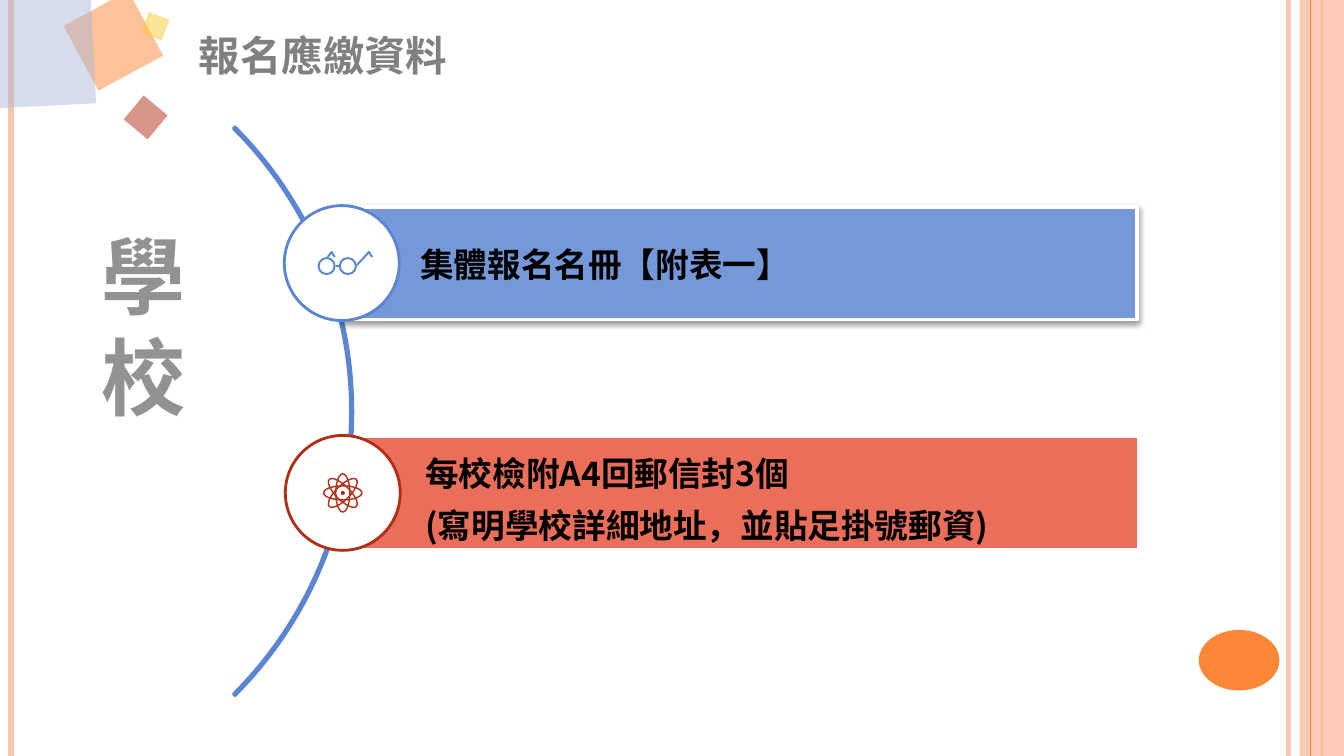
from lxml import etree
from pptx import Presentation
from pptx.dml.color import RGBColor
from pptx.enum import shapes, text
from pptx.oxml import ns
from pptx.util import Inches, Pt

FONT = "Noto Sans CJK SC"
BLUE, RED, ORANGE, PEACH = "5B84D2", "B32C16", "FE8637", "FEC3AE"
RECT, OVAL = shapes.MSO_SHAPE.RECTANGLE, shapes.MSO_SHAPE.OVAL


def rgb(value):
    return RGBColor.from_string(value)


def sub(parent, tag, **attrs):
    return etree.SubElement(parent, ns.qn(tag), attrs)


def style(sp, fill=None, line=None, width=1, alpha=None):
    """Set fill, outline and fill opacity (percent), without a shadow."""
    sp.shadow.inherit = False
    if fill:
        sp.fill.solid()
        sp.fill.fore_color.rgb = rgb(fill)
    else:
        sp.fill.background()
    if alpha:
        color = next(sp.element.spPr.iter(ns.qn("a:srgbClr")))
        sub(color, "a:alpha", val=str(alpha * 1000))
    if line:
        sp.line.color.rgb = rgb(line)
        sp.line.width = Pt(width)
    else:
        sp.line.fill.background()


def add_shape(slide, kind, x, y, w, h, rotation=0, **look):
    sp = slide.shapes.add_shape(kind, Inches(x), Inches(y), Inches(w), Inches(h))
    sp.rotation = rotation
    style(sp, **look)
    return sp


def add_line(slide, x1, y1, x2, y2, color, width):
    line = slide.shapes.add_connector(
        shapes.MSO_CONNECTOR.STRAIGHT, Inches(x1), Inches(y1), Inches(x2), Inches(y2))
    line.line.color.rgb = rgb(color)
    line.line.width = Pt(width)
    sub(line.element.spPr, "a:effectLst")


def add_polyline(slide, points, color, width):
    start, *rest = [(Inches(x), Inches(y)) for x, y in points]
    builder = slide.shapes.build_freeform(*start)
    builder.add_line_segments(rest, close=False)
    style(builder.convert_to_shape(), line=color, width=width)


def write(sp, wording, size, color, align=text.PP_ALIGN.LEFT, spacing=None):
    tf = sp.text_frame
    tf.word_wrap = True
    p = tf.paragraphs[0]
    p.text = wording
    p.alignment = align
    p.line_spacing = spacing
    p.font.name = FONT
    p.font.size = Pt(size)
    p.font.bold = True
    p.font.color.rgb = rgb(color)
    for latin in list(sp.element.iter(ns.qn("a:latin"))):
        latin.addnext(latin.makeelement(ns.qn("a:ea"), {"typeface": FONT}))


def add_text(slide, x, y, w, h, *wording, **look):
    sp = slide.shapes.add_textbox(Inches(x), Inches(y), Inches(w), Inches(h))
    write(sp, *wording, **look)


def add_drop_shadow(sp):
    effects = sp.element.spPr.find(ns.qn("a:effectLst"))
    shadow = sub(effects, "a:outerShdw", blurRad=str(Pt(4)), dist=str(Pt(2)),
                 dir="5400000", rotWithShape="0")
    sub(sub(shadow, "a:srgbClr", val="000000"), "a:alpha", val="40000")


def add_backdrop(slide):
    for x, color, width in ((12.78, "FEC7B4", 3), (0.11, PEACH, 4.5), (13.11, ORANGE, 1.5)):
        add_line(slide, x, 0, x, 7.5, color, width)
    add_shape(slide, RECT, 12.89, 0, 0.44, 7.5, fill=PEACH, alpha=87)
    add_line(slide, 13, 0, 13, 7.5, ORANGE, 0.75)
    add_shape(slide, OVAL, 11.89, 6.25, 0.8, 0.6, fill=ORANGE)
    for x, y, size, rotation, color in (
            (0.76, 0.04, 0.73, 331.6, ORANGE),
            (-0.46, -0.32, 1.38, 357.2, "AEBAD5"),
            (1.29, 1.01, 0.31, 309.8, RED),
            (1.43, 0.15, 0.22, 290.5, "F5CD2D")):
        add_shape(slide, RECT, x, y, size, size, rotation, fill=color, alpha=50)


def add_arc(slide):
    arc = add_shape(slide, shapes.MSO_SHAPE.BLOCK_ARC, -4.48, 0.09, 7.98, 7.98,
                    line=BLUE, width=2)
    for i, value in enumerate((189, 27, 0.003)):
        arc.adjustments[i] = value


def add_banner(slide, x, y, fill, color, edge):
    """Add a bar with a round badge over its left end."""
    bar = add_shape(slide, RECT, x, y, 7.89, 1.12, fill=fill, line="FFFFFF", width=edge)
    add_shape(slide, OVAL, x - 0.57, y - 0.01, 1.14, 1.14, fill="FFFFFF", line=color, width=2)
    return bar


def add_atom(slide, cx, cy):
    for rotation in range(0, 180, 45):
        add_shape(slide, OVAL, cx - 0.19, cy - 0.07, 0.38, 0.14, rotation, line=RED, width=1)
    add_shape(slide, OVAL, cx - 0.02, cy - 0.02, 0.04, 0.04, fill=RED)


def add_glasses(slide):
    for cx in (3.24, 3.45):
        add_shape(slide, OVAL, cx - 0.08, 2.56, 0.16, 0.16, line=BLUE, width=1.4)
    add_line(slide, 3.33, 2.64, 3.37, 2.64, BLUE, 1.4)
    add_polyline(slide, ((3.25, 2.55), (3.29, 2.5), (3.32, 2.55)), BLUE, 1.4)
    add_polyline(slide, ((3.54, 2.63), (3.66, 2.5), (3.69, 2.55)), BLUE, 1.4)


def add_title(slide, wording):
    title = slide.shapes.title
    title.left, title.top = Inches(1.87), Inches(0.26)
    title.width, title.height = Inches(8.13), Inches(0.58)
    title.text_frame.vertical_anchor = text.MSO_ANCHOR.MIDDLE
    write(title, wording, 29.6, "808080")


def main():
    prs = Presentation()
    prs.slide_width, prs.slide_height = Inches(13.33), Inches(7.5)
    slide = prs.slides.add_slide(prs.slide_layouts.get_by_name("Title Only"))
    add_backdrop(slide)
    add_title(slide, "報名應繳資料")
    add_arc(slide)
    add_text(slide, 0.52, 2.18, 1.8, 2.12, "學校", 60, "929292", align=text.PP_ALIGN.CENTER)

    add_banner(slide, 3.4, 4.33, "EB6E5A", RED, 2)
    add_atom(slide, 3.4, 4.89)
    add_text(slide, 4.12, 4.32, 7.14, 1.15,
             "每校檢附A4回郵信封3個\n(寫明學校詳細地址，並貼足掛號郵資)", 24, "000000", spacing=1.3)

    add_drop_shadow(add_banner(slide, 3.39, 2.05, "7598D9", BLUE, 2.75))
    add_glasses(slide)
    add_text(slide, 4.07, 2.25, 6.8, 0.63, "集體報名名冊【附表一】", 24, "000000", spacing=1.3)
    prs.save("out.pptx")


if __name__ == "__main__":
    main()
